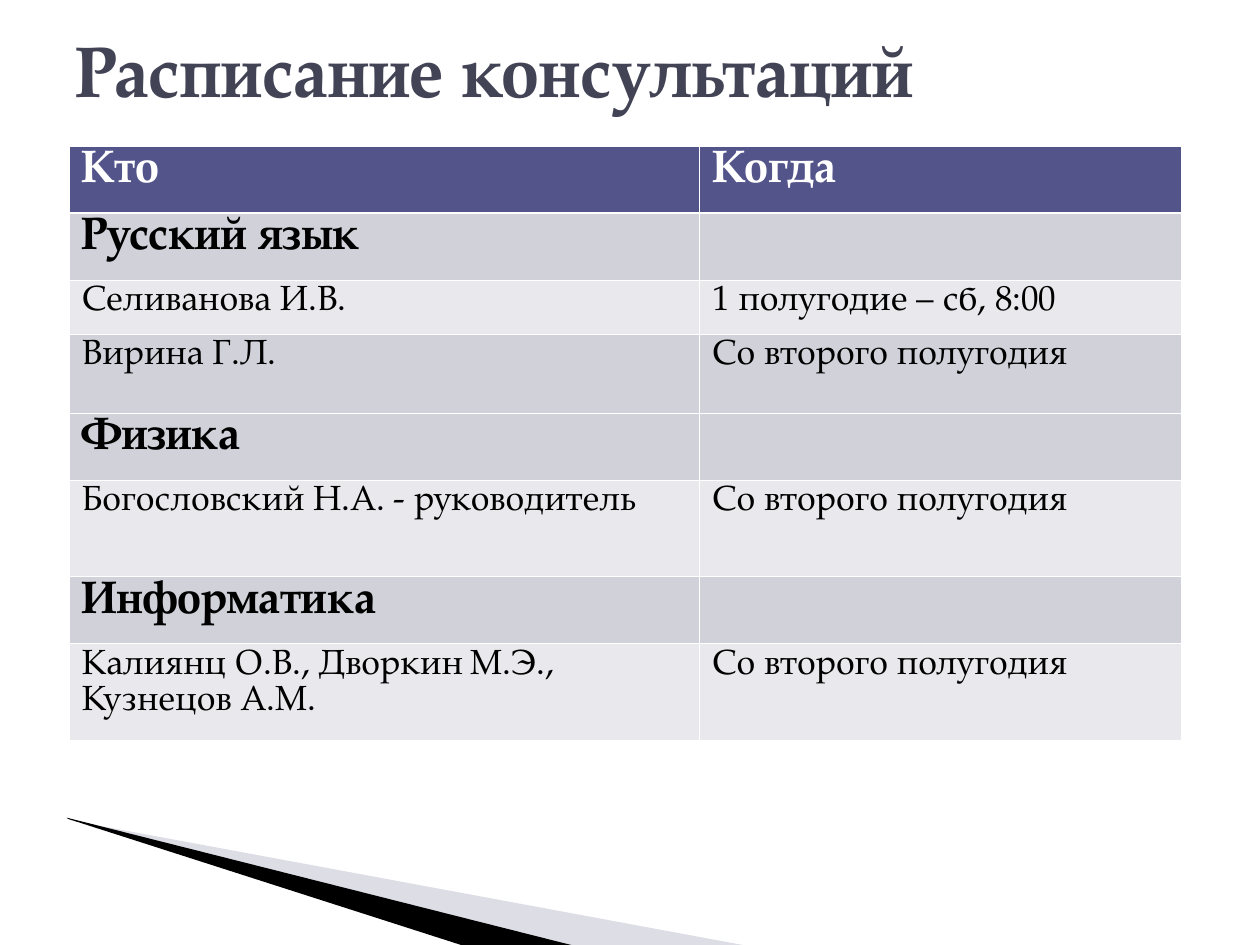
from lxml import etree
from pptx import Presentation
from pptx.dml.color import RGBColor
from pptx.enum.text import MSO_ANCHOR, MSO_AUTO_SIZE, PP_ALIGN
from pptx.oxml.ns import qn
from pptx.util import Pt

LEFT = PP_ALIGN.LEFT
MIDDLE = MSO_ANCHOR.MIDDLE
TOP = MSO_ANCHOR.TOP
NO_FIT = MSO_AUTO_SIZE.NONE

FONT = "TeX Gyre Pagella"
COLORS = {
    "title": "424456",
    "header": "53548A",
    "dark_band": "D1D1DA",
    "light_band": "E9E9ED",
    "wedge": "A9AABF",
    "black": "000000",
    "white": "FFFFFF",
}
THIN, THICK = 0.45, 1.47
HEADING_SIZE, BODY_SIZE = 26, 20

WEDGES = [
    ([(39.6, 468.7), (428.4, 540.7), (328.3, 540.7), (39.6, 468)], "wedge", 40),
    ([(38.2, 467.3), (329, 540.7), (267.8, 541.4), (38.9, 468)], "black", 100),
]

COLUMNS = [360.2, 275.3]
LATER = "Со второго полугодия"
TEACHERS = [
    [("Калиянц О.В., Дворкин", BODY_SIZE), (" ", 16), ("М.Э.,", BODY_SIZE)],
    "Кузнецов А.М.",
]
ROWS = [
    (38.4, "header", True, "Кто", "Когда"),
    (38.4, "dark_band", True, "Русский язык", ""),
    (31, "light_band", False, "Селиванова И.В.", "1 полугодие – сб, 8:00"),
    (45, "dark_band", False, "Вирина Г.Л.", LATER),
    (38.4, "dark_band", True, "Физика", ""),
    (55, "light_band", False, "Богословский Н.А. - руководитель", LATER),
    (38.4, "dark_band", True, "Информатика", ""),
    (55, "light_band", False, TEACHERS, LATER),
]


def rgb(name):
    return RGBColor.from_string(COLORS[name])


def write(tf, text, size=BODY_SIZE, color="black", bold=False, spacing=1.0, gap=0):
    paragraphs = text if isinstance(text, list) else [text]
    for i, content in enumerate(paragraphs):
        p = tf.paragraphs[0] if i == 0 else tf.add_paragraph()
        p.alignment = LEFT
        p.line_spacing = spacing
        p.space_before = Pt(gap if i else 0)
        runs = content if isinstance(content, list) else [(content, size)]
        for run_text, run_size in runs:
            r = p.add_run()
            r.text = run_text
            r.font.name = FONT
            r.font.size = Pt(run_size)
            r.font.bold = bold
            r.font.color.rgb = rgb(color)


class ScheduleSlide:
    def __init__(self, prs):
        self.s = prs.slides.add_slide(prs.slide_layouts[5])

    def wedge(self, points, color, opacity):
        corners = [(Pt(x), Pt(y)) for x, y in points]
        builder = self.s.shapes.build_freeform(*corners[0], scale=1.0)
        builder.add_line_segments(corners[1:], close=True)
        sp = builder.convert_to_shape()
        sp.shadow.inherit = False
        sp.line.fill.background()
        sp.fill.solid()
        sp.fill.fore_color.rgb = rgb(color)
        if opacity < 100:
            clr = sp.fill._xPr.find(qn("a:solidFill"))[0]
            etree.SubElement(clr, qn("a:alpha"), val=str(opacity * 1000))

    def title(self, text, x, y, w, h):
        sp = self.s.shapes.title
        sp.left, sp.top, sp.width, sp.height = Pt(x), Pt(y), Pt(w), Pt(h)
        tf = sp.text_frame
        tf.auto_size = NO_FIT
        tf.vertical_anchor = MIDDLE
        write(tf, text, size=41, color="title", bold=True)

    def borders(self, cell, top, bottom):
        tc_pr = cell._tc.get_or_add_tcPr()
        widths = {"a:lnL": THIN, "a:lnR": THIN, "a:lnT": top, "a:lnB": bottom}
        for tag, width in widths.items():
            ln = etree.SubElement(tc_pr, qn(tag), w=str(int(Pt(width))))
            fill = etree.SubElement(ln, qn("a:solidFill"))
            etree.SubElement(fill, qn("a:srgbClr"), val=COLORS["white"])

    def cell(self, cell, text, row, band, heading):
        self.borders(cell, THICK if row == 1 else THIN, THICK if row == 0 else THIN)
        cell.fill.solid()
        cell.fill.fore_color.rgb = rgb(band)
        cell.vertical_anchor = TOP
        if text:
            write(cell.text_frame, text, size=HEADING_SIZE if heading else BODY_SIZE,
                  color="white" if band == "header" else "black", bold=heading,
                  spacing=0.85, gap=3.6)

    def table(self, rows, columns, x, y):
        height = sum(row[0] for row in rows)
        frame = self.s.shapes.add_table(len(rows), len(columns), Pt(x), Pt(y),
                                        Pt(sum(columns)), Pt(height))
        table = frame.table
        for column, width in zip(table.columns, columns):
            column.width = Pt(width)
        for i, (row_height, band, heading, *texts) in enumerate(rows):
            table.rows[i].height = Pt(row_height)
            for j, text in enumerate(texts):
                self.cell(table.cell(i, j), text, i, band, heading)


def main():
    prs = Presentation()
    prs.slide_width, prs.slide_height = Pt(720), Pt(540)
    slide = ScheduleSlide(prs)
    for wedge in WEDGES:
        slide.wedge(*wedge)
    slide.title("Расписание консультаций", 36, 11.5, 648, 55.4)
    slide.table(ROWS, COLUMNS, 39.6, 83.4)
    prs.save("out.pptx")


if __name__ == "__main__":
    main()
